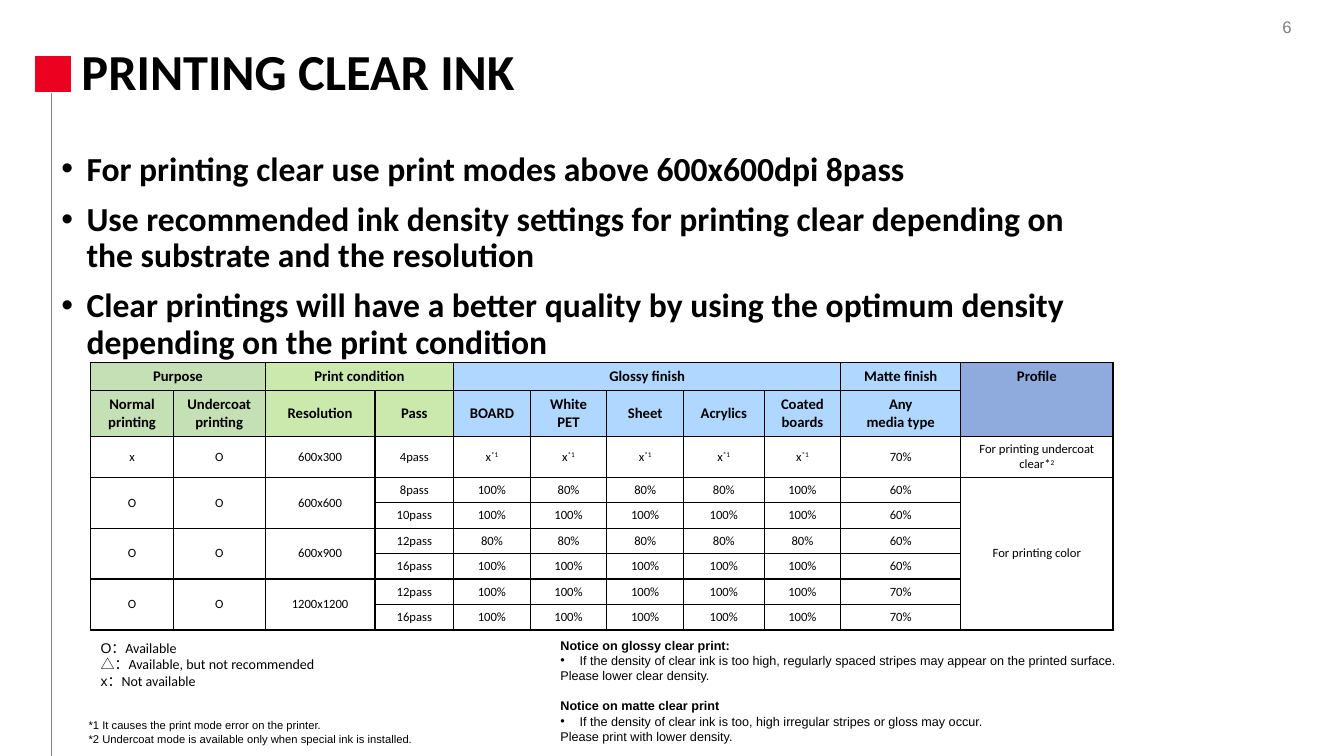
from dataclasses import dataclass

from lxml import etree
from pptx import Presentation
from pptx.dml.color import RGBColor
from pptx.enum.shapes import MSO_CONNECTOR as Connector, MSO_SHAPE as Shape
from pptx.enum.text import MSO_ANCHOR as Anchor, MSO_AUTO_SIZE as AutoSize, PP_ALIGN as Align
from pptx.oxml import parse_xml
from pptx.oxml.ns import nsdecls, qn
from pptx.util import Inches, Pt

PAGE_NUMBER = "6"
TITLE = "PRINTING CLEAR INK"
POINTS = [
    "For printing clear use print modes above 600x600dpi 8pass",
    "Use recommended ink density settings for printing clear depending on the substrate and the resolution",
    "Clear printings will have a better quality by using the optimum density depending on the print condition",
]
GROUPS = ["Purpose", "", "Print condition", "", "Glossy finish", "", "", "", "", "Matte finish", "Profile"]
HEADINGS = ["Normal\nprinting", "Undercoat\nprinting", "Resolution", "Pass", "BOARD", "White\nPET",
            "Sheet", "Acrylics", "Coated\nboards", "Any\nmedia type", ""]
UNAVAILABLE = "x^*1"
SETTINGS = [
    ["x", "O", "600x300", "4pass", *[UNAVAILABLE] * 5, "70%", "For printing undercoat clear*^2"],
    ["O", "O", "600x600", "8pass", "100%", "80%", "80%", "80%", "100%", "60%", "For printing color"],
    ["", "", "", "10pass", *["100%"] * 5, "60%", ""],
    ["O", "O", "600x900", "12pass", *["80%"] * 5, "60%", ""],
    ["", "", "", "16pass", *["100%"] * 5, "60%", ""],
    ["O", "O", "1200x1200", "12pass", *["100%"] * 5, "70%", ""],
    ["", "", "", "16pass", *["100%"] * 5, "70%", ""],
]
COLUMN_WIDTHS = [0.82, 0.91, 1.09, 0.78, 0.76, 0.76, 0.76, 0.8, 0.76, 1.19, 1.51]
ROW_HEIGHTS = [0.27, 0.45, 0.4] + [0.25] * 6
MERGES = [(0, 0, 0, 1), (0, 2, 0, 3), (0, 4, 0, 8), (0, 10, 1, 10), (3, 10, 8, 10)]
MERGES += [(row, column, row + 1, column) for row in (3, 5, 7) for column in range(3)]
LEGEND = [("O：", "Available"), ("△：", "Available, but not recommended"), ("x：", "Not available")]
NOTICES = [
    ("Notice on glossy clear print:",
     "If the density of clear ink is too high, regularly spaced stripes may appear on the printed surface.",
     "Please lower clear density."),
    ("Notice on matte clear print",
     "If the density of clear ink is too, high irregular stripes or gloss may occur.",
     "Please print with lower density."),
]
FOOTNOTES = [
    "*1 It causes the print mode error on the printer.",
    "*2 Undercoat mode is available only when special ink is installed.",
]


@dataclass(frozen=True)
class Theme:
    heading: str = "Calibri"
    small: str = "Arial"
    ink: str = "000000"
    gray: str = "808080"
    red: str = "EC0121"
    purpose: str = "C5E0B4"
    condition: str = "CCE9AD"
    finish: str = "AFD7FF"
    profile: str = "8FAADC"
    title_size: float = 36
    point_size: float = 24
    number_size: float = 12
    header_size: float = 10.5
    legend_size: float = 10
    cell_size: float = 9
    notice_size: float = 9
    footnote_size: float = 8
    small_leading: float = 1.2


theme = Theme()
HEADER_FILLS = [theme.purpose] * 2 + [theme.condition] * 2 + [theme.finish] * 6 + [theme.profile]


def style(font, size, name, color=theme.ink, bold=False):
    font.size, font.name, font.bold = Pt(size), name, bold
    font.color.rgb = RGBColor.from_string(color)


def add_text_box(page, left, top, width, height, wrap=True, anchor=Anchor.TOP):
    frame = page.shapes.add_textbox(*map(Inches, (left, top, width, height))).text_frame
    frame.word_wrap = wrap
    frame.auto_size = AutoSize.NONE
    frame.vertical_anchor = anchor
    return frame


def next_paragraph(frame, index):
    return frame.add_paragraph() if index else frame.paragraphs[0]


def add_bullet(para, indent):
    properties = para._p.get_or_add_pPr()
    properties.set("marL", str(Inches(indent)))
    properties.set("indent", str(-Inches(indent)))
    etree.SubElement(properties, qn("a:buFont"), typeface="Arial")
    etree.SubElement(properties, qn("a:buChar"), char="•")


def add_frame_marks(page):
    square = page.shapes.add_shape(Shape.RECTANGLE, *map(Inches, (0.35, 0.56, 0.35, 0.35)))
    square.shadow.inherit = False
    square.fill.solid()
    square.fill.fore_color.rgb = RGBColor.from_string(theme.red)
    square.line.color.rgb = RGBColor.from_string(theme.red)
    square.line.width = Pt(1)
    rule = page.shapes.add_connector(Connector.STRAIGHT, *map(Inches, (0.51, 0.92, 0.51, 7.5)))
    rule.line.color.rgb = RGBColor.from_string(theme.gray)
    rule.line.width = Pt(1)
    etree.SubElement(rule._element.spPr, qn("a:effectLst"))


def add_headline(page):
    number = add_text_box(page, 12.42, 0.12, 0.69, 0.3).paragraphs[0]
    number.text, number.alignment = PAGE_NUMBER, Align.CENTER
    style(number.font, theme.number_size, theme.small, theme.gray)
    title = add_text_box(page, 0.71, 0.39, 10.31, 0.7, anchor=Anchor.MIDDLE).paragraphs[0]
    title.text, title.line_spacing = TITLE, 0.9
    style(title.font, theme.title_size, theme.heading, bold=True)


def add_points(page):
    frame = add_text_box(page, 0.51, 1.46, 10.51, 6.04)
    for index, text in enumerate(POINTS):
        para = next_paragraph(frame, index)
        para.text = text
        add_bullet(para, 0.25)
        para.line_spacing = 0.9
        para.space_before = Pt(10 if index else 0)
        style(para.font, theme.point_size, theme.heading, bold=True)


def add_borders(cell):
    properties = cell._tc.get_or_add_tcPr()
    for position, side in enumerate(("lnL", "lnR", "lnT", "lnB")):
        properties.insert(position, parse_xml(
            f'<a:{side} {nsdecls("a")} w="{Pt(1)}"><a:solidFill><a:srgbClr val="{theme.ink}"/>'
            f'</a:solidFill></a:{side}>'))


def fill_cell(cell, text, header, color):
    for index, line in enumerate(text.split("\n")):
        para = next_paragraph(cell.text_frame, index)
        para.alignment = Align.CENTER
        size = theme.header_size if header else theme.cell_size
        style(para.font, size, theme.heading, bold=header)
        base, _, raised = line.partition("^")
        if base:
            para.add_run().text = base
        if raised:
            span = para.add_run()
            span.text = raised
            span.font._element.set("baseline", "30000")
    if header:
        cell.fill.solid()
        cell.fill.fore_color.rgb = RGBColor.from_string(color)
    else:
        cell.fill.background()
    add_borders(cell)


def add_density_table(page):
    rows = [GROUPS, HEADINGS, *SETTINGS]
    table = page.shapes.add_table(
        len(rows), len(GROUPS), Inches(0.9), Inches(3.6),
        Inches(sum(COLUMN_WIDTHS)), Inches(sum(ROW_HEIGHTS))).table
    table.first_row = table.horz_banding = False
    for column, width in zip(table.columns, COLUMN_WIDTHS):
        column.width = Inches(width)
    for row, height in zip(table.rows, ROW_HEIGHTS):
        row.height = Inches(height)
    for row_index, texts in enumerate(rows):
        for column_index, text in enumerate(texts):
            cell = table.cell(row_index, column_index)
            cell.vertical_anchor = Anchor.MIDDLE if row_index else Anchor.TOP
            fill_cell(cell, text, row_index < 2, HEADER_FILLS[column_index])
    for top, left, bottom, right in MERGES:
        table.cell(top, left).merge(table.cell(bottom, right))


def add_legend(page):
    frame = add_text_box(page, 0.9, 6.29, 2.83, 0.61)
    for index, parts in enumerate(LEGEND):
        para = next_paragraph(frame, index)
        for text, name in zip(parts, (theme.small, theme.heading)):
            span = para.add_run()
            span.text = text
            style(span.font, theme.legend_size, name)


def add_small_print(page):
    frame = add_text_box(page, 5.46, 6.28, 6.31, 1.16)
    leading = Pt(theme.notice_size * theme.small_leading)
    lines = [(order, part, text) for order, notice in enumerate(NOTICES) for part, text in enumerate(notice)]
    for index, (order, part, text) in enumerate(lines):
        para = next_paragraph(frame, index)
        para.text, para.line_spacing = text, leading
        if part == 1:
            add_bullet(para, 0.19)
        if order and part == 0:
            para.space_before = leading
        style(para.font, theme.notice_size, theme.small, bold=part == 0)
    footer = add_text_box(page, 0.78, 7.08, 3.55, 0.37, wrap=False)
    for index, text in enumerate(FOOTNOTES):
        para = next_paragraph(footer, index)
        para.text, para.line_spacing = text, Pt(theme.footnote_size * theme.small_leading)
        style(para.font, theme.footnote_size, theme.small)


def main():
    deck = Presentation()
    deck.slide_width, deck.slide_height = Inches(13.33), Inches(7.5)
    page = deck.slides.add_slide(deck.slide_layouts[6])
    for draw in (add_frame_marks, add_headline, add_points, add_small_print, add_density_table, add_legend):
        draw(page)
    deck.save("out.pptx")


if __name__ == "__main__":
    main()
